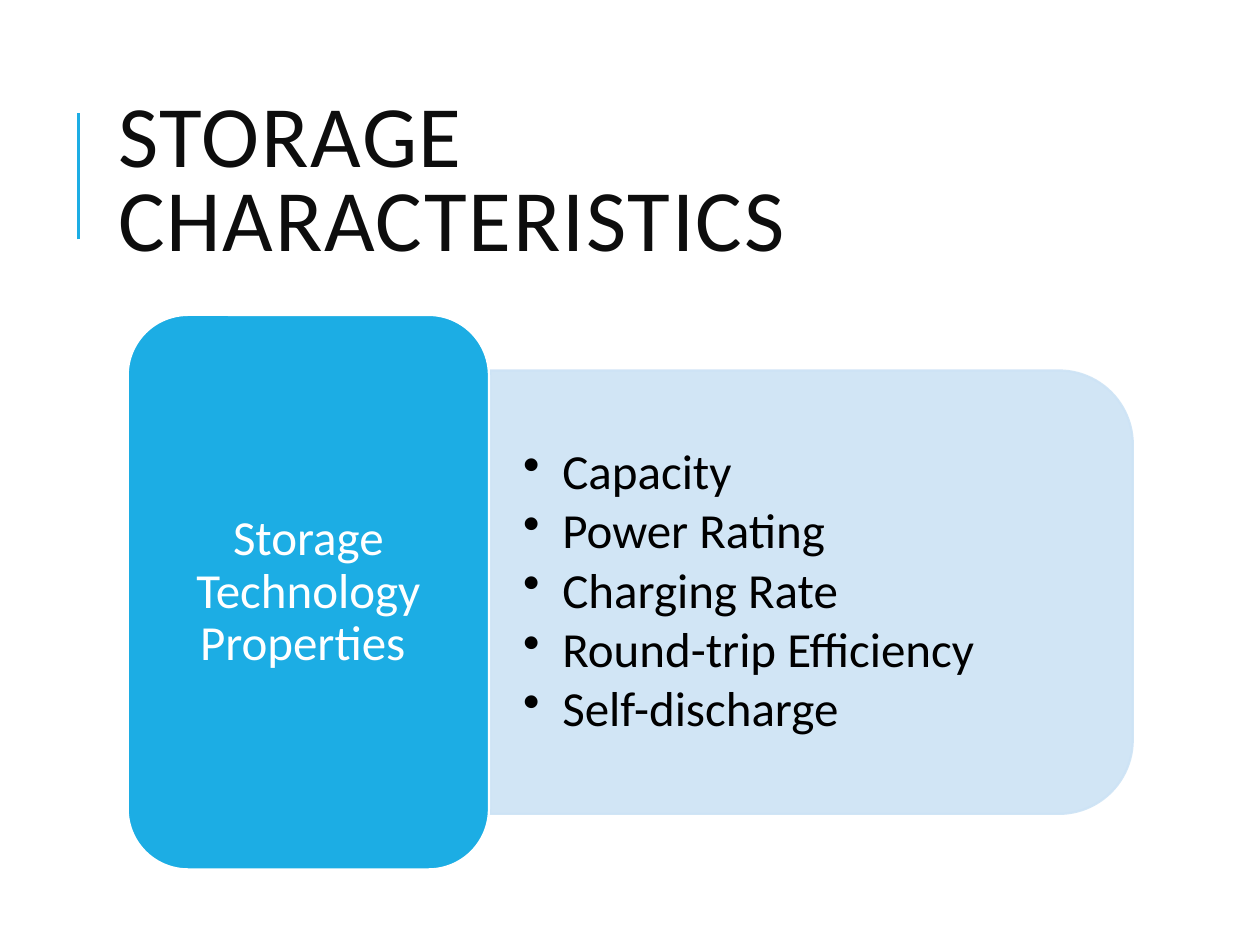
import pptx
import pptx.dml.color
import pptx.enum.shapes
import pptx.enum.text
import pptx.oxml
import pptx.oxml.ns
import pptx.util
from lxml import etree

Pt = pptx.util.Pt
Shapes = pptx.enum.shapes.MSO_SHAPE
Align = pptx.enum.text.PP_ALIGN
BLUE = "1CADE4"
PALE_BLUE = "CDE3F5"
WHITE = "FFFFFF"
PROPERTIES = ["Capacity", "Power Rating", "Charging Rate", "Round-trip Efficiency", "Self-discharge"]


def color(value):
    return pptx.dml.color.RGBColor.from_string(value)


def add_child(parent, tag, **attributes):
    return etree.SubElement(parent, pptx.oxml.ns.qn(tag), attributes)


def set_opacity(shape, percent):
    for element in shape._element.spPr.iter(pptx.oxml.ns.qn("a:srgbClr")):
        add_child(element, "a:alpha", val=str(percent * 1000))


def add_bullet(paragraph, indent):
    properties = paragraph._p.get_or_add_pPr()
    properties.set("marL", str(Pt(indent)))
    properties.set("indent", str(-Pt(indent)))
    add_child(properties, "a:buChar", char="•")


def write_text(shape, text, size=28, text_color="000000", align=Align.LEFT, line_spacing=0.9,
               space_after=0, margins=(7.2, 3.6), bullet_indent=0, letter_spacing=0):
    frame = shape.text_frame
    frame.word_wrap = True
    frame.vertical_anchor = pptx.enum.text.MSO_ANCHOR.MIDDLE
    frame.margin_left = frame.margin_right = Pt(margins[0])
    frame.margin_top = frame.margin_bottom = Pt(margins[1])
    frame.text = text
    for paragraph in frame.paragraphs:
        paragraph.alignment = align
        paragraph.line_spacing = line_spacing
        paragraph.space_after = Pt(space_after)
        if bullet_indent:
            add_bullet(paragraph, bullet_indent)
        for run in paragraph.runs:
            run.font.name = "Calibri"
            run.font.size = Pt(size)
            run.font.color.rgb = color(text_color)
            if letter_spacing:
                run.font._element.set("spc", str(letter_spacing * 100))


def add_text(slide, text, left, top, width, height, **text_format):
    box = slide.shapes.add_textbox(Pt(left), Pt(top), Pt(width), Pt(height))
    write_text(box, text, **text_format)


def add_panel(slide, kind, left, top, width, height, fill, line):
    shape = slide.shapes.add_shape(kind, Pt(left), Pt(top), Pt(width), Pt(height))
    shape.shadow.inherit = False
    shape.fill.solid()
    shape.fill.fore_color.rgb = color(fill)
    shape.line.color.rgb = color(line)
    shape.line.width = Pt(1.25)
    return shape


def add_line(slide, start_x, start_y, end_x, end_y, line, width):
    connector = slide.shapes.add_connector(
        pptx.enum.shapes.MSO_CONNECTOR.STRAIGHT, Pt(start_x), Pt(start_y), Pt(end_x), Pt(end_y))
    connector.line.color.rgb = color(line)
    connector.line.width = Pt(width)
    add_child(connector._element.spPr, "a:effectLst")


def main():
    presentation = pptx.Presentation()
    presentation.slide_width = Pt(720)
    presentation.slide_height = Pt(540)
    slide = presentation.slides.add_slide(presentation.slide_layouts[6])

    add_line(slide, 45, 136.8, 45, 64.8, BLUE, 1.5)
    add_text(slide, "STORAGE CHARACTERISTICS", 60.5, 46.1, 573.8, 118.1,
             size=50, text_color="0D0D0D", line_spacing=0.8, letter_spacing=1)

    list_panel = add_panel(slide, Shapes.ROUND_2_SAME_RECTANGLE, 337, 154.8, 253.4, 367.2,
                           PALE_BLUE, PALE_BLUE)
    list_panel.rotation = 90
    set_opacity(list_panel, 90)
    add_text(slide, "\n".join(PROPERTIES), 279.4, 223.9, 355, 229,
             space_after=3.7, margins=(19.5, 9.75), bullet_indent=22.5)

    label_panel = add_panel(slide, Shapes.ROUNDED_RECTANGLE, 73, 180, 206.4, 316.8, BLUE, WHITE)
    write_text(label_panel, "Storage Technology Properties ", text_color=WHITE,
               align=Align.CENTER, margins=(8.4, 4.2))

    presentation.save("out.pptx")


if __name__ == "__main__":
    main()
